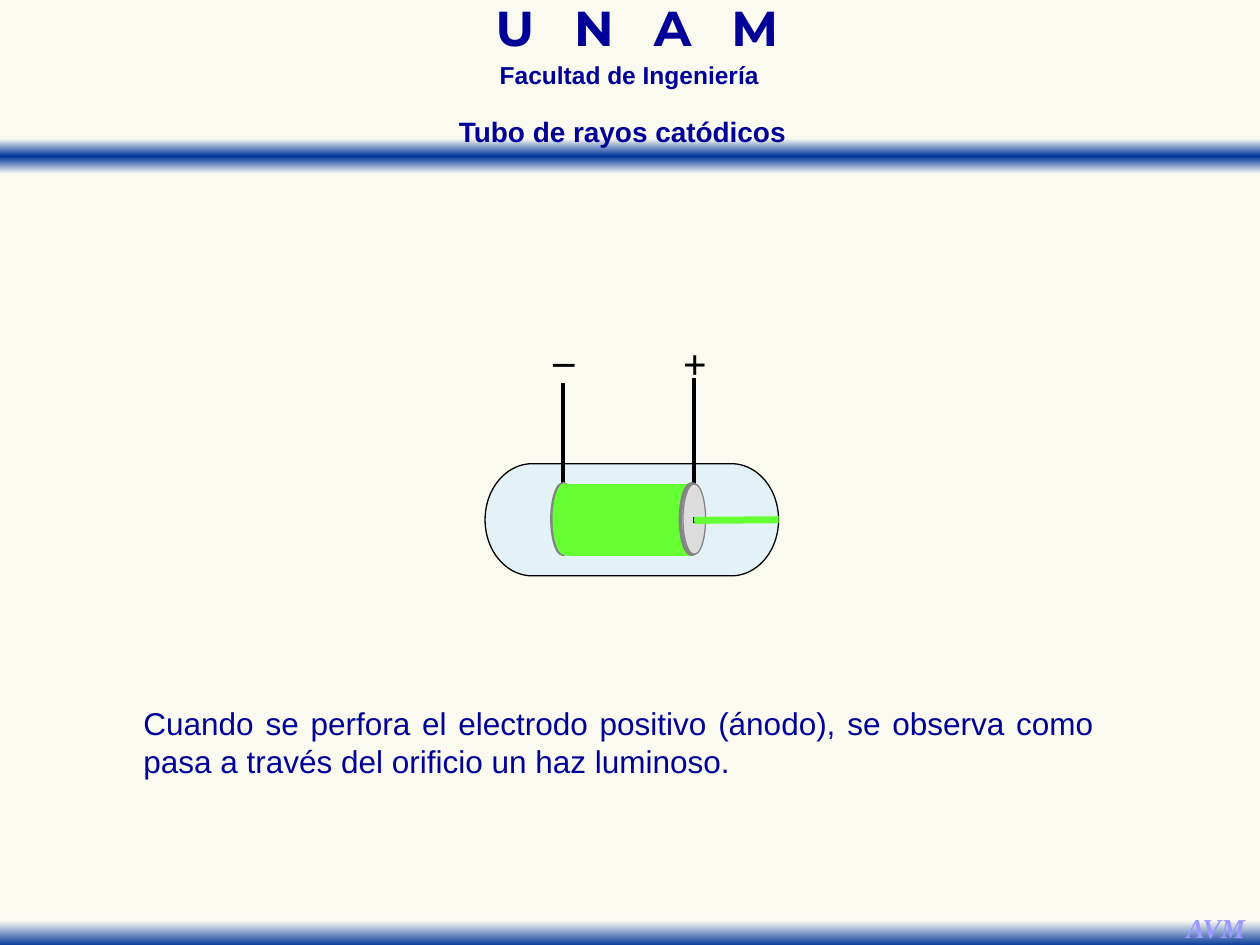
from lxml import etree
from pptx import Presentation
from pptx.dml.color import RGBColor
from pptx.enum import shapes, text
from pptx.oxml.ns import qn
from pptx.util import Inches, Pt

THEME = {
    "paper": "FAFAF0", "fade": "FAFAF2", "band": "003399", "ink": "000099",
    "black": "000000", "mark": "9999FF", "glass": "CCECFF", "ray": "66FF33",
    "disc": "DDDDDD", "rim": "848484", "hole": "000066",
    "sans": "Arial", "serif": "Times New Roman", "display": "Montserrat",
    "school": 28, "faculty": 14, "title": 16, "body": 18, "sign": 24, "initials": 15.6,
}
S, A = shapes.MSO_SHAPE, text.PP_ALIGN

# Content: text, box, format
TITLE = ("Tubo de rayos catódicos", (3.49, 0.86, 2.9, 0.37))
HEADINGS = [
    ("U N A M", (3.1, 0.06, 3.91, 0.43),
     dict(size="school", font="display", bold=True, spacing=0.7, tracking=7.5)),
    ("Facultad de Ingeniería", (3.21, 0.49, 3.57, 0.27),
     dict(size="faculty", bold=True, spacing=0.7)),
    ("AVM", (9.31, 7.18, 0.68, 0.37),
     dict(size="initials", font="serif", color="mark", bold=True, italic=True, wrap=False)),
]
SIGN = dict(size="sign", font="serif", color="black", bold=True, wrap=False)
LABELS = [
    ("+", (5.32, 2.63, 0.39, 0.5), SIGN),
    ("_", (4.29, 2.49, 0.37, 0.5), SIGN),
    ("Cuando se perfora el electrodo positivo (ánodo), se observa como "
     "pasa a través del orificio un haz luminoso.", (1.04, 5.54, 7.74, 0.71),
     dict(size="body", align=A.JUSTIFY)),
]

# Bands: top, gradient stops
BANDS = [
    (1.1, [(0, "fade"), (50, "band"), (100, "fade")]),
    (7.23, [(28, "fade"), (100, "band")]),
]

# Tube: preset, box, fill, line, line width
DISC = (0.18, 0.56)
TUBE = (S.FLOWCHART_TERMINATOR, (3.85, 3.68, 2.33, 0.89), "glass", "black", 0.75)
ELECTRODES = [
    (S.OVAL, (4.38, 3.84, *DISC), "disc", "rim", 2),
    (S.OVAL, (4.39, 3.84, *DISC), "ray", "ray", 0.75),
    (S.RECTANGLE, (4.5, 3.85, 0.98, 0.56), "ray", "ray", 0.75),
    (S.OVAL, (5.4, 3.84, *DISC), "disc", "rim", 2),
    (S.OVAL, (5.42, 3.84, *DISC), "disc", "rim", 0.75),
    (S.RECTANGLE, (5.5, 4.11, 0.02, 0.04), "hole", "black", 0.5),
]
LEADS = [((4.47, 3.86), (4.47, 3.04)), ((5.51, 3.85), (5.51, 3))]
BEAM = ((6.18, 4.13), (5.51, 4.13))


def rgb(name):
    return RGBColor.from_string(THEME[name])


def inches(values):
    return [Inches(v) for v in values]


def write(sp, words, size, font="sans", color="ink", bold=False, italic=False,
          align=A.CENTER, wrap=True, spacing=None, tracking=None,
          anchor=text.MSO_ANCHOR.TOP):
    tf = sp.text_frame
    tf.word_wrap = wrap
    tf.auto_size = text.MSO_AUTO_SIZE.NONE
    tf.vertical_anchor = anchor
    p = tf.paragraphs[0]
    p.alignment = align
    if spacing:
        p.line_spacing = spacing
    r = p.add_run()
    r.text = words
    r.font.name, r.font.size = THEME[font], Pt(THEME[size])
    r.font.bold, r.font.italic = bold, italic
    r.font.color.rgb = rgb(color)
    if tracking:
        r.font._element.set("spc", str(int(tracking * 100)))


def add_text(slide, words, box, **style):
    write(slide.shapes.add_textbox(*inches(box)), words, **style)


def add_shape(slide, preset, box, fill, line, width):
    sp = slide.shapes.add_shape(preset, *inches(box))
    sp.shadow.inherit = False
    sp.fill.solid()
    sp.fill.fore_color.rgb = rgb(fill)
    sp.line.color.rgb = rgb(line)
    sp.line.width = Pt(width)
    return sp


def add_band(slide, top, stops):
    sp = slide.shapes.add_shape(S.RECTANGLE, *inches((0, top, 10, 0.28)))
    sp.shadow.inherit = False
    sp.line.fill.background()
    sp.fill.gradient()
    grad = sp._element.spPr.find(qn("a:gradFill"))
    for child in list(grad):
        grad.remove(child)
    gs_list = etree.SubElement(grad, qn("a:gsLst"))
    for position, color in stops:
        gs = etree.SubElement(gs_list, qn("a:gs"), pos=str(position * 1000))
        etree.SubElement(gs, qn("a:srgbClr"), val=THEME[color])
    etree.SubElement(grad, qn("a:lin"), ang="5400000", scaled="0")


def add_line(slide, start, end, color, width):
    line = slide.shapes.add_connector(
        shapes.MSO_CONNECTOR.STRAIGHT, *inches((*start, *end)))
    line.line.color.rgb = rgb(color)
    line.line.width = Pt(width)
    etree.SubElement(line._element.spPr, qn("a:effectLst"))
    return line


def main():
    prs = Presentation()
    prs.slide_width, prs.slide_height = Inches(10), Inches(7.5)
    slide = prs.slides.add_slide(prs.slide_layouts[5])
    slide.background.fill.solid()
    slide.background.fill.fore_color.rgb = rgb("paper")

    # Bands and headings
    for top, stops in BANDS:
        add_band(slide, top, stops)
    for words, box, style in HEADINGS:
        add_text(slide, words, box, **style)

    # Glass tube, half transparent
    tube = add_shape(slide, *TUBE)
    color = tube._element.spPr.find(qn("a:solidFill"))[0]
    etree.SubElement(color, qn("a:alpha"), val="50000")

    # Leads, electrodes and beam
    for start, end in LEADS:
        add_line(slide, start, end, "black", 2)
    for part in ELECTRODES:
        add_shape(slide, *part)
    add_line(slide, *BEAM, "ray", 4).begin_connect(tube, 3)

    # Signs and explanation
    for words, box, style in LABELS:
        add_text(slide, words, box, **style)

    # Title, in front of the upper band
    title = slide.shapes.title
    words, box = TITLE
    title.left, title.top, title.width, title.height = inches(box)
    write(title, words, size="title", bold=True, wrap=False,
          anchor=text.MSO_ANCHOR.MIDDLE)
    slide.shapes._spTree.append(title._element)

    prs.save("out.pptx")


if __name__ == "__main__":
    main()
